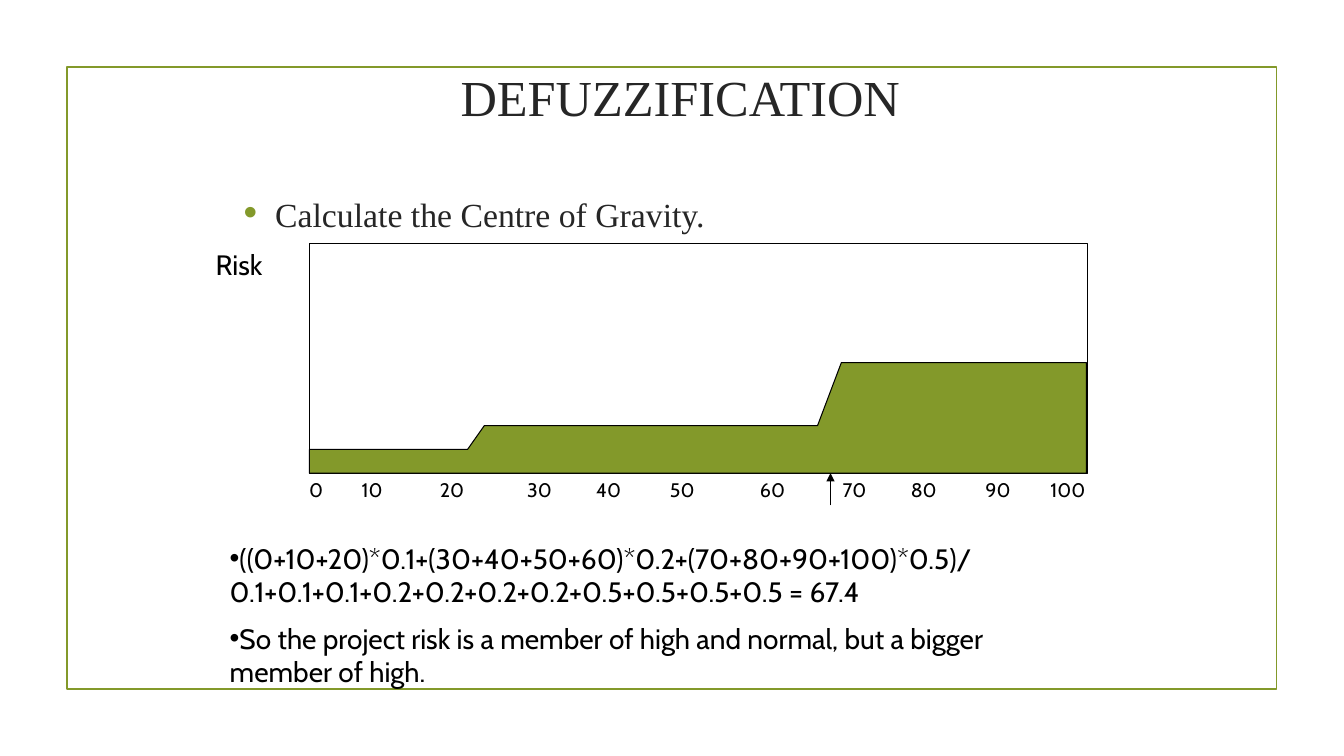
import pptx
import pptx.dml.color
import pptx.enum.shapes
import pptx.enum.text
import pptx.oxml
import pptx.oxml.ns
import pptx.util
from lxml import etree

Pt = pptx.util.Pt
RGB = pptx.dml.color.RGBColor.from_string
PP_ALIGN = pptx.enum.text.PP_ALIGN
ANCHOR = pptx.enum.text.MSO_ANCHOR
SHAPE = pptx.enum.shapes.MSO_SHAPE
qn = pptx.oxml.ns.qn

THEME = {
    "green": "83992A", "ink": "262626", "black": "000000",
    "serif": "Times New Roman", "sans": "Cabin",
    "title": 36, "bullet": 24.1, "body": 20, "axis": 14,
}


def write(sp, box, paragraphs, size, font="sans", color="black", align=PP_ALIGN.LEFT,
          anchor=ANCHOR.TOP, wrap=True, bullet=None, bullet_size=100, indent=0,
          line=1.0, gap=0, tabs=()):
    sp.left, sp.top, sp.width, sp.height = [Pt(v) for v in box]
    tf = sp.text_frame
    tf.word_wrap = wrap
    tf.auto_size = pptx.enum.text.MSO_AUTO_SIZE.NONE
    tf.vertical_anchor = anchor
    for i, text in enumerate(paragraphs):
        p = tf.paragraphs[0] if i == 0 else tf.add_paragraph()
        p.alignment = align
        p.line_spacing = line
        p.space_before = Pt(gap if i else 0)
        pPr = p._p.get_or_add_pPr()
        if bullet:
            pPr.set("marL", str(Pt(indent)))
            pPr.set("indent", str(-Pt(indent)))
            clr = etree.SubElement(pPr, qn("a:buClr"))
            etree.SubElement(clr, qn("a:srgbClr"), val=THEME[bullet])
            etree.SubElement(pPr, qn("a:buSzPct"), val=str(bullet_size * 1000))
            etree.SubElement(pPr, qn("a:buFont"), typeface="Arial")
            etree.SubElement(pPr, qn("a:buChar"), char="•")
        if tabs:
            tab_list = etree.SubElement(pPr, qn("a:tabLst"))
            for pos in tabs:
                etree.SubElement(tab_list, qn("a:tab"), pos=str(Pt(pos)), algn="ctr")
        r = p.add_run()
        r.text = text
        r.font.size = Pt(THEME[size])
        r.font.name = THEME[font]
        r.font.color.rgb = RGB(THEME[color])


def paint(sp, line, width, fill=None):
    sp.shadow.inherit = False
    if fill:
        sp.fill.solid()
        sp.fill.fore_color.rgb = RGB(THEME[fill])
    else:
        sp.fill.background()
    sp.line.color.rgb = RGB(THEME[line])
    sp.line.width = Pt(width)


prs = pptx.Presentation()
prs.slide_width, prs.slide_height = Pt(960), Pt(540)
s = prs.slides.add_slide(prs.slide_layouts[5])
shapes = s.shapes

frame = shapes.add_shape(SHAPE.RECTANGLE, Pt(47.75), Pt(48), Pt(864), Pt(444))
paint(frame, "green", 1.25)

write(shapes.title, (144, 36, 684, 66), ["DEFUZZIFICATION"], "title", font="serif",
      color="ink", align=PP_ALIGN.CENTER, anchor=ANCHOR.MIDDLE)

heading_box = (167, 142.5, 614, 35)
write(shapes.add_textbox(0, 0, 0, 0), heading_box, ["Calculate the Centre of Gravity."],
      "bullet", font="serif", color="ink", bullet="green", bullet_size=115,
      indent=22.5, line=0.7)

left, right, top, base = 221, 776.5, 173.75, 338
plot = shapes.add_shape(SHAPE.RECTANGLE, Pt(left), Pt(top), Pt(right - left), Pt(base - top))
paint(plot, "black", 0.75)

low, normal, high = 321, 304, 258.75
outline = [(left, low), (334.25, low), (345.5, normal), (583.75, normal),
           (600.75, high), (right, high), (right, base)]
fb = shapes.build_freeform(left, base, scale=Pt(1))
fb.add_line_segments(outline, close=True)
paint(fb.convert_to_shape(), "black", 0.75, fill="green")

label_tabs = [45, 102, 164.5, 214, 266.5, 331, 389.5, 439, 492, 542]
axis_labels = "\t".join(str(v) for v in range(0, 101, 10))
write(shapes.add_textbox(0, 0, 0, 0), (213.75, 337.75, 587.5, 24), [axis_labels],
      "axis", tabs=label_tabs)

write(shapes.add_textbox(0, 0, 0, 0), (147, 173.5, 51, 31.5), ["Risk"], "body", wrap=False)

calculation = [
    "((0+10+20)*0.1+(30+40+50+60)*0.2+(70+80+90+100)*0.5)/"
    "0.1+0.1+0.1+0.2+0.2+0.2+0.2+0.5+0.5+0.5+0.5 = 67.4",
    "So the project risk is a member of high and normal, but a bigger member of high.",
]
write(shapes.add_textbox(0, 0, 0, 0), (157, 383, 623.5, 115), calculation, "body",
      bullet="black", gap=9)

arrow = shapes.add_connector(pptx.enum.shapes.MSO_CONNECTOR.STRAIGHT,
                             Pt(593.25), Pt(361), Pt(593.25), Pt(base))
arrow.line.color.rgb = RGB(THEME["black"])
arrow.line.width = Pt(0.75)
etree.SubElement(arrow.line._get_or_add_ln(), qn("a:tailEnd"), type="triangle")
etree.SubElement(arrow._element.spPr, qn("a:effectLst"))

prs.save("out.pptx")
